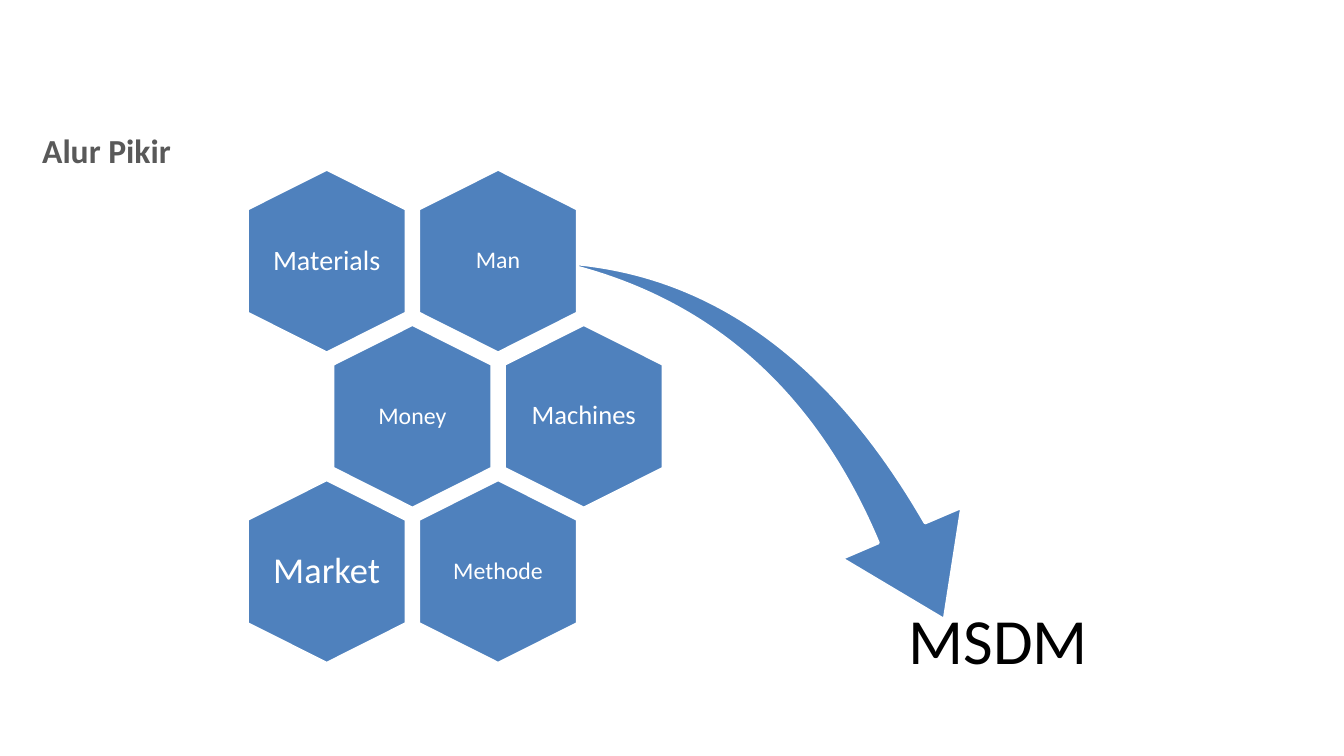
from dataclasses import dataclass

from pptx import Presentation
from pptx.dml.color import RGBColor
from pptx.enum import shapes, text
from pptx.util import Inches, Pt

BLUE = RGBColor(0x4F, 0x81, 0xBD)
WHITE = RGBColor(0xFF, 0xFF, 0xFF)
GREY = RGBColor(0x59, 0x59, 0x59)
BLACK = RGBColor(0x00, 0x00, 0x00)
FONT = "Calibri"

# Honeycomb grid, in inches
GRID_LEFT, GRID_TOP = 2.33, 1.8
COLUMN_PITCH, ROW_PITCH = 1.7, 1.54
ODD_ROW_SHIFT = COLUMN_PITCH / 2
HEX_WIDTH, HEX_HEIGHT = 1.82, 1.58
LABEL_WIDTH, LABEL_HEIGHT = 1.09, 1.25


@dataclass
class Box:
    left: float
    top: float
    width: float
    height: float

    def lengths(self) -> list[Inches]:
        return [Inches(v) for v in (self.left, self.top, self.width, self.height)]


@dataclass
class Resource:
    name: str
    row: int
    column: int
    size: int
    inset: float = 0


RESOURCES = [
    Resource("Man", 0, 1, 17, 0.07),
    Resource("Materials", 0, 0, 20),
    Resource("Money", 1, 0, 17, 0.07),
    Resource("Machines", 1, 1, 19),
    Resource("Methode", 2, 1, 17, 0.07),
    Resource("Market", 2, 0, 26),
]


def add_figure(slide, kind, box: Box, rotation: float, adjustments: list[float]) -> None:
    figure = slide.shapes.add_shape(kind, *box.lengths())
    figure.rotation = rotation
    for index, value in enumerate(adjustments):
        figure.adjustments[index] = value
    figure.shadow.inherit = False
    figure.fill.solid()
    figure.fill.fore_color.rgb = BLUE
    figure.line.color.rgb = WHITE
    figure.line.width = Pt(2)


def add_label(slide, wording: str, box: Box, size: int, color: RGBColor,
              inset: float = 0, anchor=text.MSO_ANCHOR.MIDDLE,
              align=text.PP_ALIGN.CENTER, spacing: float = 0.9,
              bold: bool = False) -> None:
    frame = slide.shapes.add_textbox(*box.lengths()).text_frame
    frame.word_wrap = True
    frame.vertical_anchor = anchor
    frame.margin_left = frame.margin_right = Inches(inset)
    frame.margin_top = frame.margin_bottom = Inches(inset)
    line = frame.paragraphs[0]
    line.text = wording
    line.alignment = align
    line.line_spacing = spacing
    line.font.name = FONT
    line.font.size = Pt(size)
    line.font.bold = bold
    line.font.color.rgb = color


def add_resource(slide, resource: Resource) -> None:
    left = GRID_LEFT + resource.column * COLUMN_PITCH + resource.row % 2 * ODD_ROW_SHIFT
    top = GRID_TOP + resource.row * ROW_PITCH
    add_figure(slide, shapes.MSO_SHAPE.HEXAGON,
               Box(left, top, HEX_WIDTH, HEX_HEIGHT), 90, [0.25, 1.15])
    label_box = Box(left + (HEX_WIDTH - LABEL_WIDTH) / 2,
                    top + (HEX_HEIGHT - LABEL_HEIGHT) / 2,
                    LABEL_WIDTH, LABEL_HEIGHT)
    add_label(slide, resource.name, label_box, resource.size, WHITE, resource.inset)


def main() -> None:
    deck = Presentation()
    deck.slide_width, deck.slide_height = Inches(13.33), Inches(7.5)
    slide = deck.slides.add_slide(deck.slide_layouts[6])

    # Title
    add_label(slide, "Alur Pikir", Box(0.32, 1.25, 11.02, 0.47), 24, GREY, 0.1,
              align=text.PP_ALIGN.LEFT, spacing=1.0, bold=True)

    # Arrow and its outcome
    add_figure(slide, shapes.MSO_SHAPE.SWOOSH_ARROW,
               Box(5.44, 2.74, 4.49, 3.13), 73.3, [0.16, 0.31])
    add_label(slide, "MSDM", Box(8.84, 5.96, 2.12, 0.83), 46, BLACK, 0.06,
              anchor=text.MSO_ANCHOR.BOTTOM)

    # Honeycomb of resources
    for resource in RESOURCES:
        add_resource(slide, resource)

    deck.save("out.pptx")


if __name__ == "__main__":
    main()
